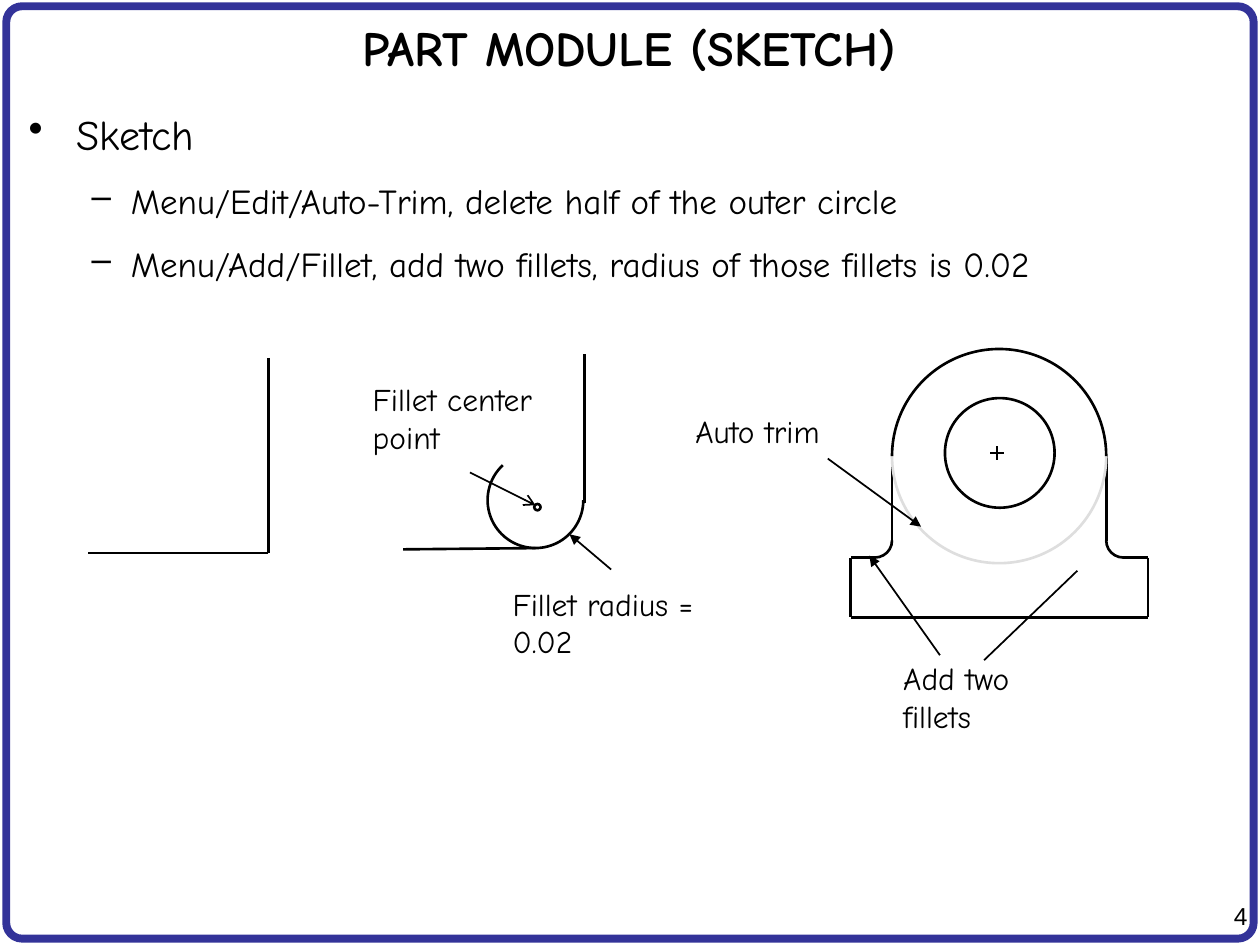
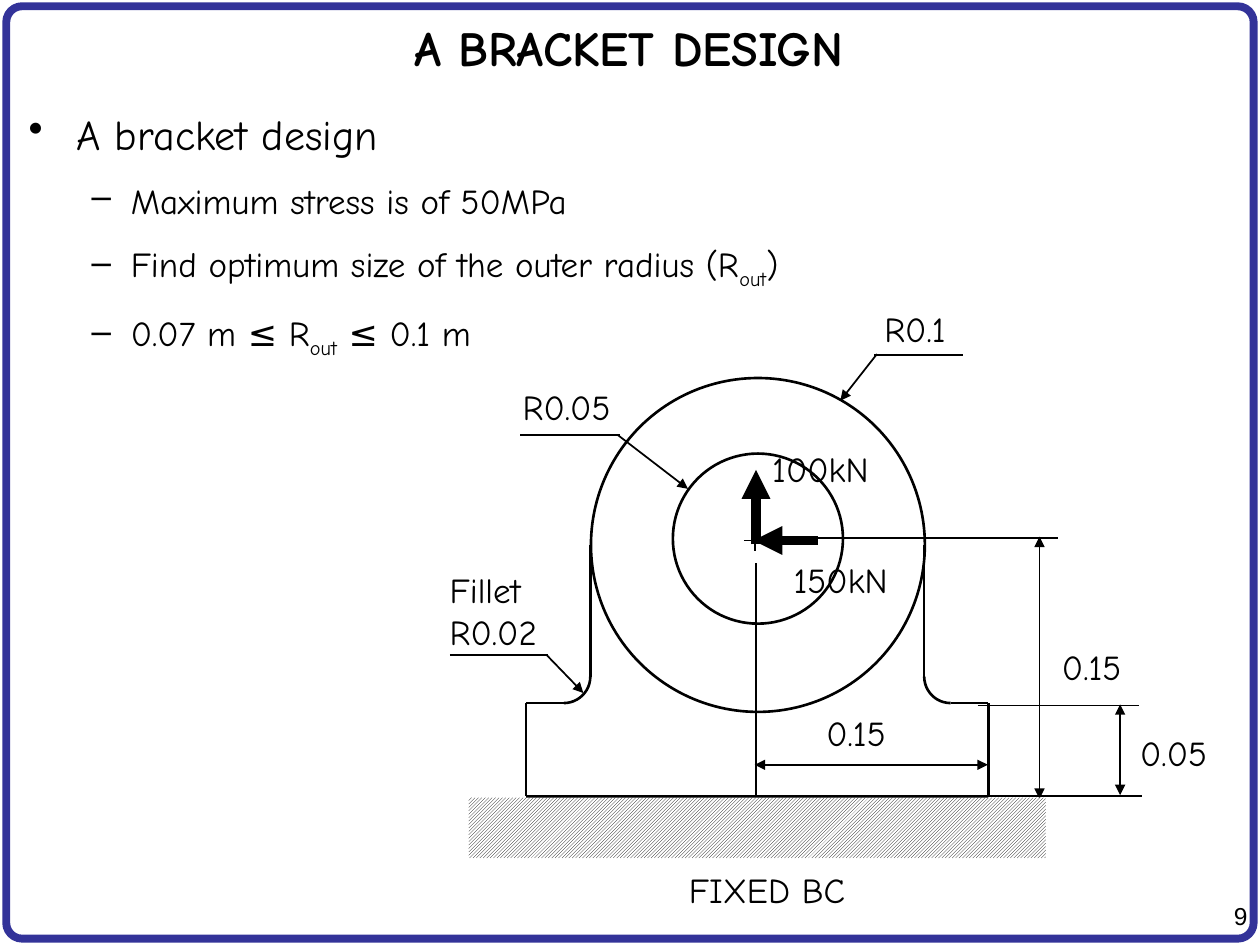
from lxml.etree import SubElement
from pptx import Presentation
from pptx.dml.color import RGBColor
from pptx.enum.dml import MSO_PATTERN
from pptx.enum.shapes import MSO_CONNECTOR, MSO_SHAPE
from pptx.enum.text import MSO_ANCHOR, PP_ALIGN
from pptx.oxml.ns import qn
from pptx.util import Inches, Pt

COLORS = {name: RGBColor.from_string(value) for name, value in {
    "ink": "000000", "paper": "FFFFFF", "frame": "333399", "trimmed": "DEDEDE",
}.items()}
FONT = "Comic Neue"

prs = Presentation()
prs.slide_width, prs.slide_height = Inches(10), Inches(7.5)
# Every position below is in cells of a grid of 100 columns by 75 rows.
COL, ROW = prs.slide_width / 100, prs.slide_height / 75


def add_line(s, x1, y1, x2, y2, width=1, head=None, tail=None):
    """Draw a line; head and tail name the arrowheads at its start and end."""
    c = s.shapes.add_connector(MSO_CONNECTOR.STRAIGHT, round(x1 * COL), round(y1 * ROW),
                               round(x2 * COL), round(y2 * ROW))
    c.line.color.rgb = COLORS["ink"]
    c.line.width = Pt(width)
    sp_pr = c._element.spPr
    for tag, kind in (("a:headEnd", head), ("a:tailEnd", tail)):
        if kind:
            SubElement(sp_pr.find(qn("a:ln")), qn(tag), type=kind)
    SubElement(sp_pr, qn("a:effectLst"))


def add_text(s, box, text, size, font=FONT, align=PP_ALIGN.LEFT):
    """Add a text box; in the text, underscores enclose a subscript."""
    x, y, w, h = box
    tf = s.shapes.add_textbox(round(x * COL), round(y * ROW),
                              round(w * COL), round(h * ROW)).text_frame
    tf.word_wrap = True
    for i, row in enumerate(text.split("\n")):
        p = tf.paragraphs[0] if i == 0 else tf.add_paragraph()
        p.alignment = align
        for j, part in enumerate(row.split("_")):
            if not part:
                continue
            r = p.add_run()
            r.text = part
            r.font.size, r.font.name = Pt(size), font
            r.font.color.rgb = COLORS["ink"]
            if j % 2:
                r._r.get_or_add_rPr().set("baseline", "-25000")
    return tf


# circles: centre x, centre y, radius; arcs add start angle, end angle, colour
# lines: x1, y1, x2, y2, then width, head and tail where needed
pages = [
    {
        "title": "PART MODULE (SKETCH)",
        "number": "4",
        "body": ["Sketch",
                 "Menu/Edit/Auto-Trim, delete half of the outer circle",
                 "Menu/Add/Fillet, add two fillets, radius of those fillets is 0.02"],
        "bracket": {"center": 79.3, "axis": 36.2, "radius": 8.5, "half_base": 11.8,
                    "foot": 44.25, "base": 49, "fillet": 1.35},
        "cross": (79.15, 35.95, 0.55),
        "circles": [(42.65, 40.25, 0.25), (79.35, 35.95, 4.35)],
        "arcs": [(42.5, 39.7, 3.8, 0, 227, "ink"),
                 (79.3, 36.2, 8.5, 0, 180, "trimmed"),
                 (79.3, 36.2, 8.5, 180, 360, "ink")],
        "lines": [
            (21.3, 28.4, 21.3, 43.9, 1.5), (21.3, 43.9, 7, 43.9, 1.5),
            (46.4, 28.1, 46.4, 39.9, 1.5), (42.5, 43.5, 32, 43.6, 1.5),
            (48.5, 45.2, 45.2, 42.4, 1, None, "triangle"),
            (37.3, 37.5, 42.5, 40.1, 1, None, "arrow"),
            (74.6, 52, 69, 44.1, 1, None, "triangle"),
            (78.1, 52.4, 85.5, 45.3),
            (65.7, 36.4, 73.1, 41.8, 1, None, "triangle"),
        ],
        "label_size": 18,
        "labels": [((28.6, 29.7, 14.8, 7.1), "Fillet center point"),
                   ((39.7, 45.9, 17.1, 7.1), "Fillet radius = 0.02"),
                   ((54.2, 32.2, 14.8, 4), "Auto trim"),
                   ((70.7, 51.8, 14.8, 7.1), "Add two fillets")],
    },
    {
        "title": "A BRACKET DESIGN",
        "number": "9",
        "body": ["A bracket design",
                 "Maximum stress is of 50MPa",
                 "Find optimum size of the outer radius (R_out_)",
                 "0.07 m ≤ R_out_ ≤ 0.1 m"],
        "bracket": {"center": 60.1, "axis": 43.25, "radius": 13.25, "half_base": 18.35,
                    "foot": 55.8, "base": 63.2, "fillet": 2.1},
        "cross": (59.9, 42.9, 0.85),
        "circles": [(60.15, 43.25, 13.25), (60.15, 42.75, 6.75)],
        "arcs": [],
        "lines": [
            # Extension and dimension lines
            (62.1, 42.7, 84, 42.7), (60, 44.7, 60, 63.3),
            (64.8, 63.2, 90.6, 63.2), (77.6, 56, 90.4, 56),
            (82.5, 42.6, 82.5, 63.4, 1, "triangle", "triangle"),
            (59.9, 60.7, 78.4, 60.7, 1, "triangle", "triangle"),
            (88.9, 55.9, 88.9, 63.1, 1, "triangle", "triangle"),
            # Leaders of the radii
            (35.7, 52, 43.5, 52), (43.4, 52, 46.3, 55, 1, None, "triangle"),
            (41.3, 34.5, 49.2, 34.5), (49, 34.5, 54.6, 38.8, 1, None, "triangle"),
            (76.4, 28.2, 69.4, 28.2), (69.6, 28.1, 66.7, 31.8, 1, None, "triangle"),
            # Forces
            (64.9, 42.9, 59.8, 42.9, 5.5, None, "triangle"),
            (60, 43.2, 60, 37.3, 5.5, None, "triangle"),
        ],
        "label_size": 20,
        "labels": [((83.3, 50.7, 7.4, 4.4), "0.15"),
                   ((64.6, 56, 7.4, 4.4), "0.15"),
                   ((89.5, 57.6, 7.9, 4.4), "0.05"),
                   ((69.2, 23.9, 7.5, 4.4), "R0.1"),
                   ((40.5, 30.1, 9.6, 4.4), "R0.05"),
                   ((34.7, 44.6, 9.8, 7.7), "Fillet\nR0.02"),
                   ((62, 43.8, 10.5, 4.4), "150kN"),
                   ((60.3, 35, 10.5, 4.4), "100kN"),
                   ((53.7, 68.4, 15.3, 4.4), "FIXED BC")],
        "ground": (37.2, 63.3, 45.8, 4.8),
    },
]

for page in pages:
    s = prs.slides.add_slide(prs.slide_layouts[5])

    # Frame, page number and title
    frame = s.shapes.add_shape(MSO_SHAPE.ROUNDED_RECTANGLE, round(0.5 * COL), round(0.5 * ROW),
                               round(99 * COL), round(74 * ROW))
    frame.adjustments[0] = 0.017
    frame.shadow.inherit = False
    frame.fill.background()
    frame.line.color.rgb = COLORS["frame"]
    frame.line.width = Pt(4.5)
    add_text(s, (94.6, 71, 5.4, 3.3), page["number"], 14, "Arial", PP_ALIGN.RIGHT)

    title = s.shapes.title
    title.left, title.top = round(0.4 * COL), round(0.5 * ROW)
    title.width, title.height = round(99 * COL), round(6.5 * ROW)
    tf = title.text_frame
    tf.text = page["title"]
    tf.vertical_anchor = MSO_ANCHOR.MIDDLE
    p = tf.paragraphs[0]
    p.alignment = PP_ALIGN.CENTER
    font = p.runs[0].font
    font.size, font.name, font.bold = Pt(28), FONT, True
    font.color.rgb = COLORS["ink"]

    # Bulleted text: one heading, then its points
    tf = add_text(s, (1.3, 8.1, 97.4, 64.2), "\n".join(page["body"]), 20)
    for i, p in enumerate(tf.paragraphs):
        p.space_before = Pt(12)
        margin, hang, bullet = (0.81, 0.31, "–") if i else (0.38, 0.38, "•")
        p_pr = p._p.get_or_add_pPr()
        p_pr.set("marL", str(Inches(margin)))
        p_pr.set("indent", str(-Inches(hang)))
        SubElement(p_pr, qn("a:buChar"), char=bullet)
    tf.paragraphs[0].runs[0].font.size = Pt(24)

    # Bracket: both halves mirror each other about its centre
    b = page["bracket"]
    arcs = list(page["arcs"])
    for side, start in ((-1, 0), (1, 90)):
        wall = b["center"] + side * b["radius"]
        end = b["center"] + side * b["half_base"]
        bend = wall + side * b["fillet"]
        spring = b["foot"] - b["fillet"]
        add_line(s, wall, b["axis"], wall, spring, 1.5)
        add_line(s, bend, b["foot"], end, b["foot"], 1.5)
        add_line(s, end, b["foot"], end, b["base"], 1.5)
        arcs.append((bend, spring, b["fillet"], start, start + 90, "ink"))
    add_line(s, b["center"] - b["half_base"], b["base"],
             b["center"] + b["half_base"], b["base"], 1.5)

    x, y, arm = page["cross"]
    add_line(s, x - arm, y, x + arm, y)
    add_line(s, x, y - arm, x, y + arm)

    circles = [(*circle, None, None, "ink") for circle in page["circles"]]
    for x, y, radius, start, end, color in arcs + circles:
        kind = MSO_SHAPE.OVAL if start is None else MSO_SHAPE.ARC
        sp = s.shapes.add_shape(kind, round((x - radius) * COL), round((y - radius) * ROW),
                                round(2 * radius * COL), round(2 * radius * ROW))
        if kind == MSO_SHAPE.ARC:
            # An angle is stored in 60000ths of a degree, an adjustment in 100000ths
            sp.adjustments[0], sp.adjustments[1] = start * 0.6, end % 360 * 0.6
        sp.shadow.inherit = False
        sp.fill.background()
        sp.line.color.rgb = COLORS[color]
        sp.line.width = Pt(1.5)

    for line in page["lines"]:
        add_line(s, *line)
    for box, text in page["labels"]:
        add_text(s, box, text, page["label_size"])

    if "ground" in page:
        x, y, w, h = page["ground"]
        ground = s.shapes.add_shape(MSO_SHAPE.RECTANGLE, round(x * COL), round(y * ROW),
                                    round(w * COL), round(h * ROW))
        ground.shadow.inherit = False
        ground.line.fill.background()
        ground.fill.patterned()
        ground.fill.pattern = MSO_PATTERN.DARK_UPWARD_DIAGONAL
        ground.fill.fore_color.rgb = COLORS["ink"]
        ground.fill.back_color.rgb = COLORS["paper"]

prs.save("out.pptx")
